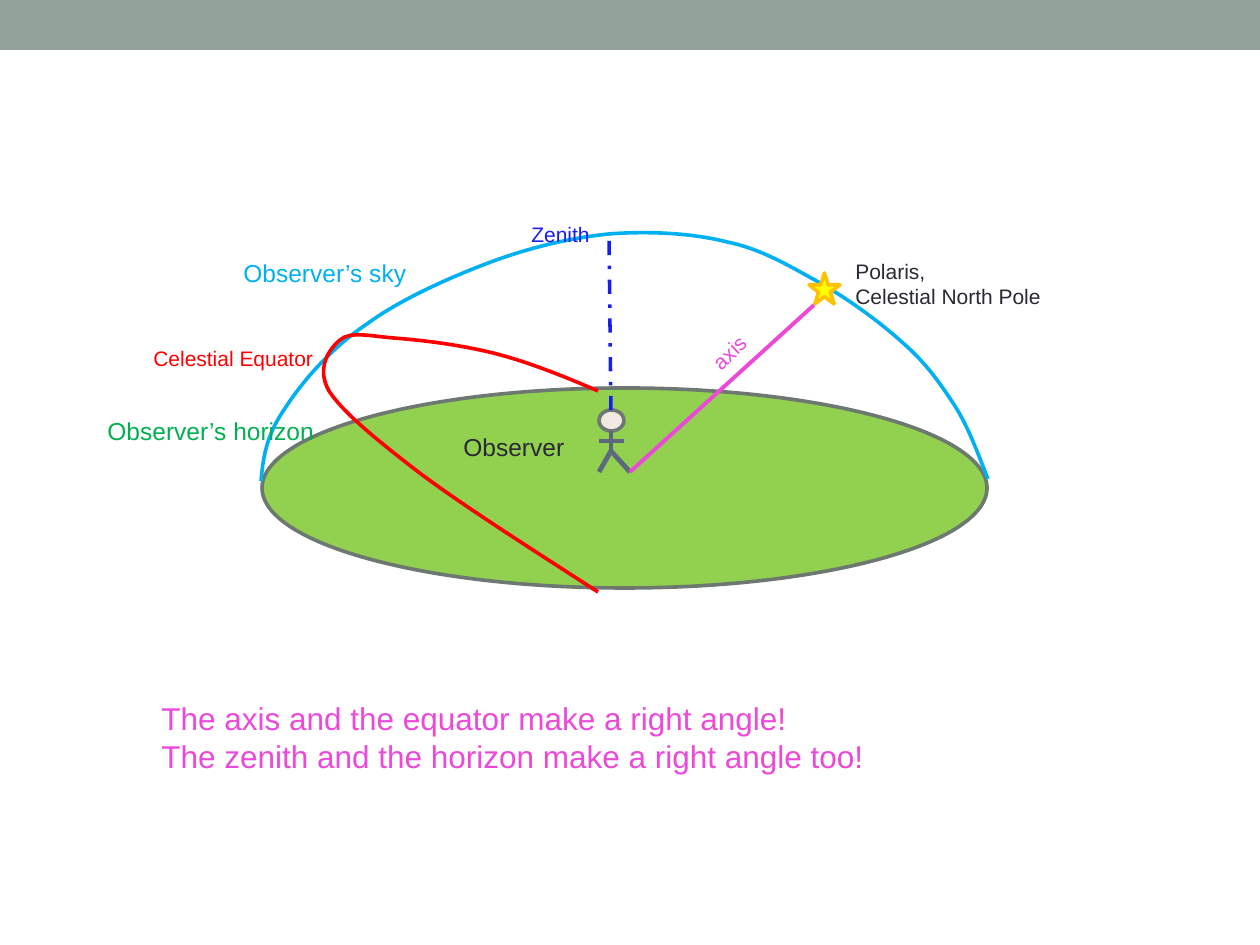
"""Build a slide showing an observer's sky, horizon and celestial equator."""
from lxml import etree
from pptx import Presentation
from pptx.dml.color import RGBColor
from pptx.enum.dml import MSO_LINE
from pptx.enum.shapes import MSO_CONNECTOR, MSO_SHAPE
from pptx.oxml.ns import qn
from pptx.util import Pt

RECT, OVAL, STAR = MSO_SHAPE.RECTANGLE, MSO_SHAPE.OVAL, MSO_SHAPE.STAR_5_POINT
STRAIGHT, DASH = MSO_CONNECTOR.STRAIGHT, MSO_LINE.DASH_DOT
PX = 914400 / 126

SAGE = RGBColor(0x93, 0xA2, 0x99)
GRASS = RGBColor(0x92, 0xD0, 0x50)
GRAY = RGBColor(0x6D, 0x78, 0x71)
CREAM = RGBColor(0xEF, 0xE9, 0xE1)
SLATE = RGBColor(0x5C, 0x69, 0x7C)
INK = RGBColor(0x29, 0x29, 0x34)
GREEN = RGBColor(0x00, 0xB0, 0x50)
SKY = RGBColor(0x00, 0xB0, 0xF0)
RED = RGBColor(0xFF, 0x00, 0x00)
PINK = RGBColor(0xED, 0x49, 0xD9)
BLUE = RGBColor(0x19, 0x1E, 0xEF)
YELLOW = RGBColor(0xFF, 0xFF, 0x00)
GOLD = RGBColor(0xFF, 0xC0, 0x00)


def emu(*sizes):
    return [round(size * PX) for size in sizes]


deck = Presentation()
deck.slide_width, deck.slide_height = emu(1260, 945)
shapes = deck.slides.add_slide(deck.slide_layouts[6]).shapes

for kind, box, fill, edge in [
    (RECT, (0, 0, 1260, 50), SAGE, None),
    (OVAL, (262, 388, 725, 200), GRASS, GRAY),
    (OVAL, (599, 410, 25, 21), CREAM, GRAY),
]:
    shape = shapes.add_shape(kind, *emu(*box))
    shape.shadow.inherit = False
    shape.fill.solid()
    shape.fill.fore_color.rgb = fill
    if edge is None:
        shape.line.fill.background()
    else:
        shape.line.color.rgb = edge
        shape.line.width = Pt(2.08)

sky = [
    (261, 481), (263, 459), (266, 436), (284, 410), (301, 383), (331, 348),
    (367, 324), (401, 299), (451, 277), (491, 262), (532, 247), (570, 238),
    (609, 234), (648, 231), (692, 233), (727, 242), (762, 249), (791, 267),
    (822, 284), (851, 301), (881, 323), (903, 343), (926, 363), (940, 383),
    (955, 406), (969, 428), (978, 454), (988, 479),
]
equator = [
    (598, 391), (561, 375), (523, 360), (489, 352), (455, 344), (420, 340),
    (394, 338), (370, 336), (350, 331), (340, 340), (329, 349), (316, 368),
    (329, 391), (343, 412), (373, 437), (417, 471), (462, 505), (530, 548),
    (598, 592),
]
for points, color in [(sky, SKY), (equator, RED)]:
    pen = shapes.build_freeform(*points[0], scale=PX)
    pen.add_line_segments(points[1:], close=False)
    curve = pen.convert_to_shape()
    curve.shadow.inherit = False
    curve.fill.background()
    curve.line.color.rgb = color
    curve.line.width = Pt(2.08)
    steps = list(curve.element.iter(qn("a:lnTo")))
    for first in range(0, len(steps), 3):
        bend = etree.Element(qn("a:cubicBezTo"))
        steps[first].addprevious(bend)
        for step in steps[first:first + 3]:
            bend.append(step[0])
            step.getparent().remove(step)

star = shapes.add_shape(STAR, *emu(809, 273, 31, 31))
star.shadow.inherit = False
star.fill.solid()
star.fill.fore_color.rgb = YELLOW
star.line.color.rgb = GOLD
star.line.width = Pt(2.08)

for ends, color, width, dash in [
    ((611, 431, 611, 452), SLATE, 2.75, None),
    ((599, 441, 624, 441), SLATE, 2.75, None),
    ((599, 472, 611, 451), SLATE, 2.75, None),
    ((630, 472, 611, 451), SLATE, 2.75, None),
    ((630, 472, 814, 305), PINK, 2.25, None),
    ((611, 410, 609, 234), BLUE, 2, DASH),
]:
    line = shapes.add_connector(STRAIGHT, *emu(*ends))
    line.line.color.rgb = color
    line.line.width = Pt(width)
    if dash is not None:
        line.line.dash_style = dash
    etree.SubElement(line.element.spPr, qn("a:effectLst"))

for text, box, size, color, turn in [
    ("Observer’s horizon", (95, 410, 233, 43), 14, GREEN, 0),
    ("Observer’s sky", (231, 252, 189, 43), 14, SKY, 0),
    ("Observer", (451, 426, 127, 43), 14, INK, 0),
    ("Celestial Equator", (141, 339, 186, 38), 12, RED, 0),
    ("Polaris,\nCelestial North Pole", (843, 252, 212, 63), 12, INK, 0),
    ("axis", (698, 333, 63, 38), 12, PINK, 316.1),
    ("The axis and the equator make a right angle!\n"
     "The zenith and the horizon make a right angle too!",
     (149, 693, 735, 89), 18, PINK, 0),
    ("Zenith", (519, 215, 91, 38), 12, BLUE, 0),
]:
    label = shapes.add_textbox(*emu(*box))
    label.rotation = turn
    frame = label.text_frame
    frame.word_wrap = False
    frame.text = text
    for para in frame.paragraphs:
        for run in para.runs:
            run.font.name = "Arial"
            run.font.size = Pt(size)
            run.font.color.rgb = color

deck.save("out.pptx")
